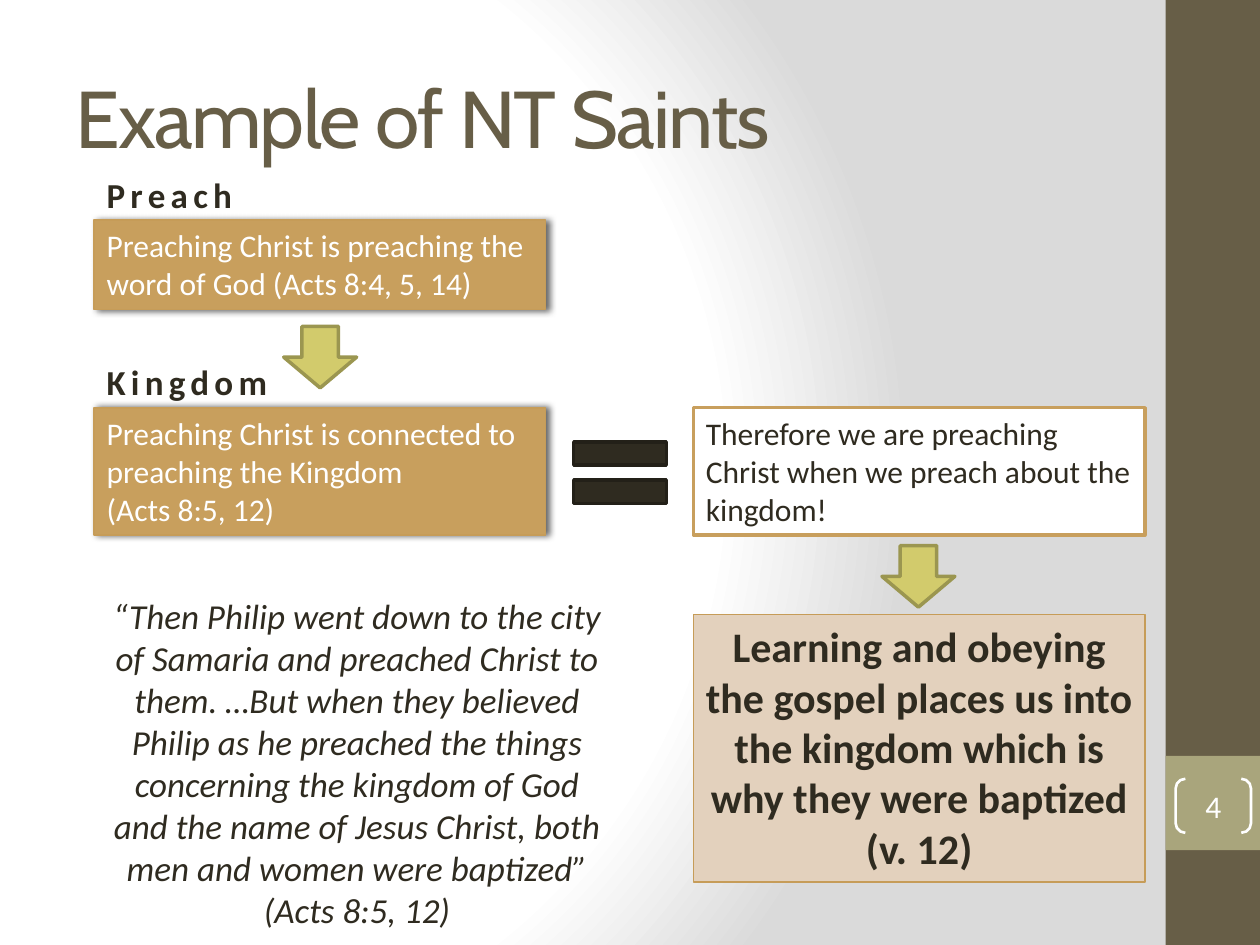
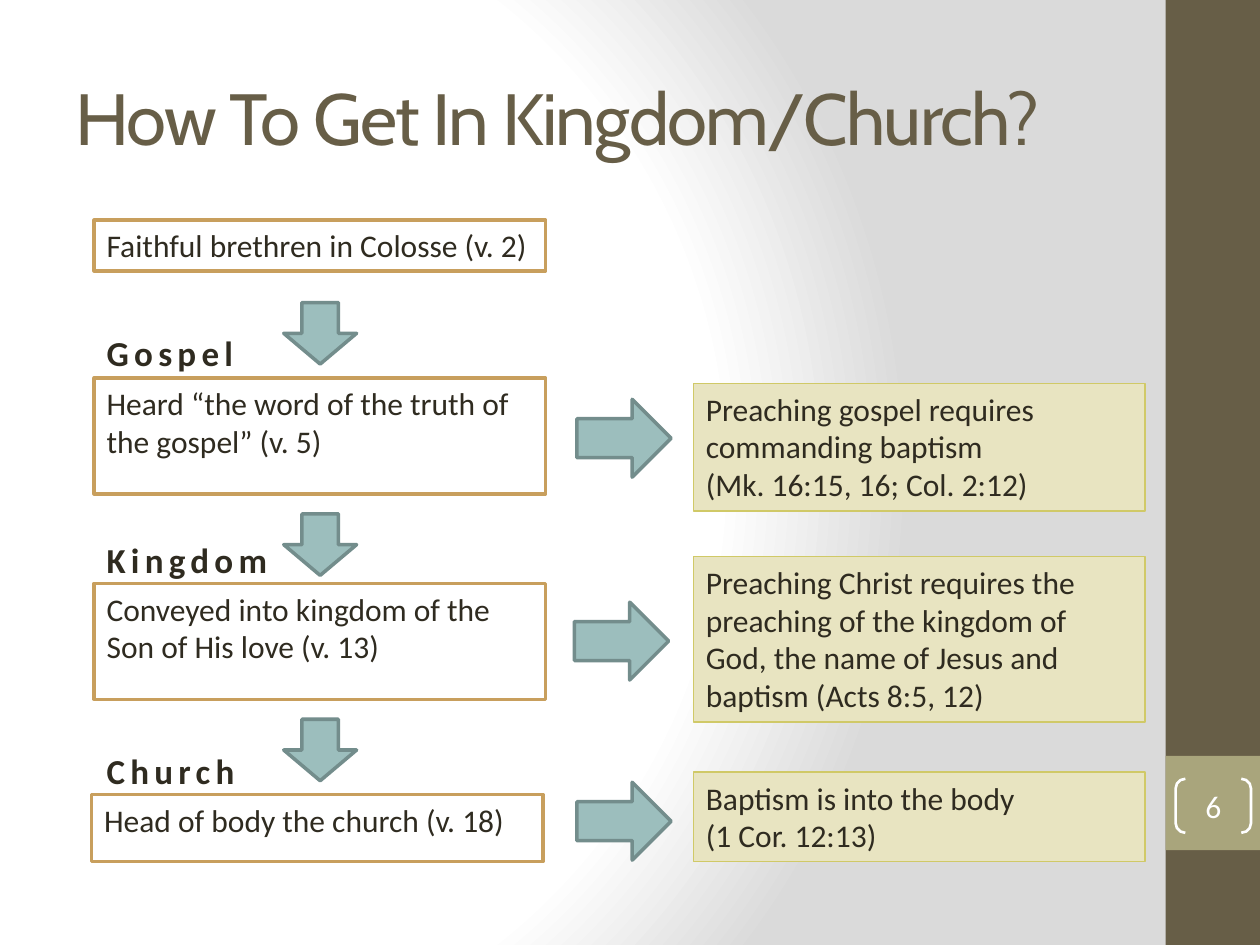
"""Build two slides about preaching the kingdom, with a shared frame."""
from copy import deepcopy
from dataclasses import dataclass
from lxml.etree import SubElement
from pptx import Presentation
from pptx.dml.color import RGBColor
from pptx.enum.shapes import MSO_SHAPE
from pptx.enum.text import MSO_ANCHOR, PP_ALIGN
from pptx.oxml import parse_xml
from pptx.oxml.ns import qn
from pptx.util import Cm, Pt


@dataclass(frozen=True)
class Theme:
    brown: str = "675E47"
    sage: str = "A9A57C"
    ink: str = "2F2B20"
    ink_edge: str = "232018"
    white: str = "FFFFFF"
    grey: str = "DADADA"
    gold: str = "C89F5D"
    gold_edge: str = "C69C58"
    sand: str = "E3D1BD"
    lime: str = "D2CB6C"
    lime_edge: str = "9B9650"
    cream: str = "E8E4C1"
    cream_edge: str = "D0C967"
    teal: str = "9CBEBD"
    teal_edge: str = "738D8C"
    head_font: str = "Cabin"
    body_font: str = "Calibri"
    body: float = 18
    label: float = 20
    strong: float = 24


T = Theme()
LEFT, RIGHT, COL = 1.9, 13.98, 9.1
DOWN_X, DOWN_W, DOWN_H = 5.72, 1.47, 1.24


def write(sp, text, font=T.body_font, size=T.body, color=T.ink, bold=False, italic=False,
          spacing=0, align=PP_ALIGN.LEFT, anchor=MSO_ANCHOR.TOP, wrap=True):
    tf = sp.text_frame
    tf.word_wrap = wrap
    tf.vertical_anchor = anchor
    p = tf.paragraphs[0]
    p.text = text
    p.alignment = align
    for r in p.runs:
        r.font.name, r.font.size = font, Pt(size)
        r.font.bold, r.font.italic = bold, italic
        r.font.color.rgb = RGBColor.from_string(color)
        if spacing:
            r.font._element.set("spc", str(spacing * 100))


def draw(s, kind, x, y, w, h, fill=None, line=None, width=2.0):
    sp = s.shapes.add_shape(kind, Cm(x), Cm(y), Cm(w), Cm(h))
    sp.shadow.inherit = False
    if fill:
        sp.fill.solid()
        sp.fill.fore_color.rgb = RGBColor.from_string(fill)
    else:
        sp.fill.background()
    if line:
        sp.line.color.rgb = RGBColor.from_string(line)
        sp.line.width = Pt(width)
    else:
        sp.line.fill.background()
    return sp


prs = Presentation()
prs.slide_width, prs.slide_height = Cm(25.4), Cm(19.05)

master = prs.slide_master
master.background.fill.gradient()
old = master.element.find(".//" + qn("a:gradFill"))
stops = "".join(f'<a:gs pos="{pos}000"><a:srgbClr val="{c}"/></a:gs>'
                for pos, c in ((0, T.white), (75, T.white), (100, T.grey)))
old.getparent().replace(old, parse_xml(
    '<a:gradFill xmlns:a="http://schemas.openxmlformats.org/drawingml/2006/main" rotWithShape="1">'
    f'<a:gsLst>{stops}</a:gsLst><a:path path="circle">'
    '<a:fillToRect l="20000" t="50000" r="100000" b="50000"/></a:path></a:gradFill>'))

slides = []
for title, size, number in (("Example of NT Saints", 46, "4"),
                            ("How To Get In Kingdom/Church?", 41.4, "6")):
    s = prs.slides.add_slide(prs.slide_layouts[6])
    draw(s, MSO_SHAPE.RECTANGLE, 23.5, 0, 1.9, 19.05, T.brown)
    draw(s, MSO_SHAPE.RECTANGLE, 23.5, 15.24, 1.9, 1.9, T.sage)
    tb = s.shapes.add_textbox(Cm(1.27), Cm(0.76), Cm(21.16), Cm(3.18))
    write(tb, title, font=T.head_font, size=size, color=T.brown, spacing=-1,
          anchor=MSO_ANCHOR.MIDDLE)
    sp = draw(s, MSO_SHAPE.DOUBLE_BRACKET, 23.7, 15.7, 1.52, 1.09, line=T.white, width=1.5)
    sp.adjustments[0] = 0.18
    tf = sp.text_frame
    tf.margin_left = tf.margin_right = tf.margin_top = tf.margin_bottom = 0
    write(sp, number, color=T.white, align=PP_ALIGN.CENTER, anchor=MSO_ANCHOR.MIDDLE)
    slides.append(s)
saints, entry = slides

shadow = parse_xml(
    '<a:outerShdw xmlns:a="http://schemas.openxmlformats.org/drawingml/2006/main" '
    'blurRad="50800" dist="25400" dir="0" rotWithShape="0">'
    '<a:srgbClr val="000000"/></a:outerShdw>')
SubElement(shadow[0], qn("a:alpha")).set("val", "60000")
for y, h, text in (
        (4.44, 1.8, "Preaching Christ is preaching the word of God (Acts 8:4, 5, 14)"),
        (8.22, 2.57, "Preaching Christ is connected to preaching the Kingdom\n(Acts 8:5, 12)")):
    sp = draw(saints, MSO_SHAPE.RECTANGLE, LEFT, y, COL, h, T.gold, T.gold_edge, 1)
    sp._element.spPr.find(qn("a:effectLst")).append(deepcopy(shadow))
    write(sp, text, color=T.white)

sp = draw(saints, MSO_SHAPE.RECTANGLE, RIGHT, 8.22, COL, 2.57, T.white, T.gold)
write(sp, "Therefore we are preaching Christ when we preach about the kingdom!")
sp = draw(saints, MSO_SHAPE.RECTANGLE, RIGHT, 12.39, COL, 5.39, T.sand, T.gold_edge, 1)
write(sp, "Learning and obeying the gospel places us into the kingdom which is why they were "
      "baptized (v. 12)", size=T.strong, bold=True, align=PP_ALIGN.CENTER)

sp = draw(saints, MSO_SHAPE.MATH_EQUAL, 11.23, 8.26, 2.54, 2.54, T.ink, T.ink_edge)
sp.adjustments[0], sp.adjustments[1] = 0.185, 0.118
for x, y in ((DOWN_X, 6.58), (17.78, 11)):
    draw(saints, MSO_SHAPE.DOWN_ARROW, x, y, DOWN_W, DOWN_H, T.lime, T.lime_edge)

tb = saints.shapes.add_textbox(Cm(LEFT), Cm(11.86), Cm(10.6), Cm(7.09))
write(tb, "“Then Philip went down to the city of Samaria and preached Christ to them. …But when "
      "they believed Philip as he preached the things concerning the kingdom of God and the name "
      "of Jesus Christ, both men and women were baptized” (Acts 8:5, 12)",
      size=T.label, italic=True, align=PP_ALIGN.CENTER)

for x, y, h, text, wrap in (
        (LEFT, 4.44, 1.02, "Faithful brethren in Colosse (v. 2)", False),
        (LEFT, 7.62, 2.34, "Heard “the word of the truth of the gospel” (v. 5)", True),
        (LEFT, 11.76, 2.34, "Conveyed into kingdom of the Son of His love (v. 13)", True),
        (1.85, 16.02, 1.35, "Head of body the church (v. 18)", True)):
    sp = draw(entry, MSO_SHAPE.RECTANGLE, x, y, COL, h, T.white, T.gold)
    write(sp, text, wrap=wrap)

for y, h, text in (
        (7.73, 2.57, "Preaching gospel requires commanding baptism\n(Mk. 16:15, 16; Col. 2:12)"),
        (11.22, 3.33, "Preaching Christ requires the preaching of the kingdom of God, "
                      "the name of Jesus and baptism (Acts 8:5, 12)"),
        (15.57, 1.8, "Baptism is into the body\n(1 Cor. 12:13)")):
    sp = draw(entry, MSO_SHAPE.RECTANGLE, RIGHT, y, COL, h, T.cream, T.cream_edge, 1)
    write(sp, text)

for y in (6.1, 10.36, 14.5):
    draw(entry, MSO_SHAPE.DOWN_ARROW, DOWN_X, y, DOWN_W, DOWN_H, T.teal, T.teal_edge)
for x, y in ((11.63, 8.05), (11.58, 12.14), (11.63, 15.77)):
    draw(entry, MSO_SHAPE.RIGHT_ARROW, x, y, 1.9, 1.57, T.teal, T.teal_edge)

for s, y, text in ((saints, 3.38, "Preach"), (saints, 7.14, "Kingdom"), (entry, 6.55, "Gospel"),
                   (entry, 10.74, "Kingdom"), (entry, 14.99, "Church")):
    tb = s.shapes.add_textbox(Cm(LEFT), Cm(y), Cm(3.9), Cm(1.12))
    write(tb, text, size=T.label, bold=True, spacing=3)

prs.save("out.pptx")
